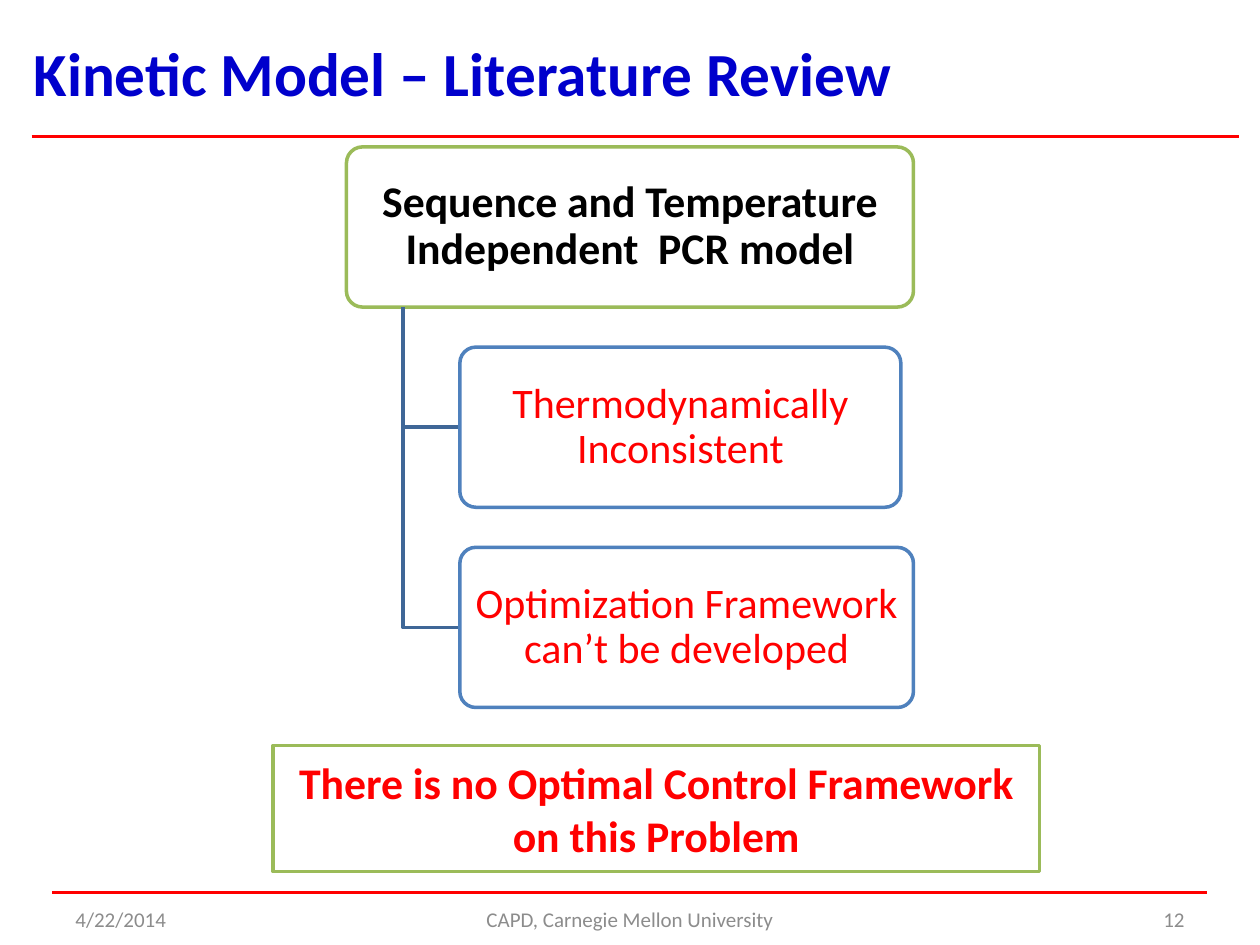
from pptx import Presentation
from pptx.dml.color import RGBColor
from pptx.enum.shapes import MSO_CONNECTOR, MSO_SHAPE
from pptx.enum.text import MSO_ANCHOR, MSO_AUTO_SIZE, PP_ALIGN
from pptx.oxml.ns import qn
from pptx.util import Pt
from lxml import etree

LINE = MSO_CONNECTOR.STRAIGHT
RECT, ROUND = MSO_SHAPE.RECTANGLE, MSO_SHAPE.ROUNDED_RECTANGLE
TOP, MIDDLE = MSO_ANCHOR.TOP, MSO_ANCHOR.MIDDLE
LEFT, CENTER, RIGHT = PP_ALIGN.LEFT, PP_ALIGN.CENTER, PP_ALIGN.RIGHT
NO_FIT = MSO_AUTO_SIZE.NONE

BLACK = RGBColor(0x00, 0x00, 0x00)
WHITE = RGBColor(0xFF, 0xFF, 0xFF)
RED = RGBColor(0xFF, 0x00, 0x00)
NAVY = RGBColor(0x00, 0x00, 0xCC)
BLUE = RGBColor(0x4F, 0x81, 0xBD)
STEEL = RGBColor(0x3F, 0x67, 0x97)
GREEN = RGBColor(0x9B, 0xBB, 0x59)
GRAY = RGBColor(0x8C, 0x8C, 0x8C)


def write(shape, text, size, color, bold=False, align=CENTER, anchor=MIDDLE):
    frame = shape.text_frame
    frame.word_wrap = True
    frame.auto_size = NO_FIT
    frame.vertical_anchor = anchor
    para = frame.paragraphs[0]
    para.alignment = align
    run = para.add_run()
    run.text = text
    font = run.font
    font.name, font.size, font.bold = "Calibri", Pt(size), bold
    font.color.rgb = color
    return frame


def add_box(kind, left, top, width, height, edge):
    box = slide.shapes.add_shape(kind, Pt(left), Pt(top), Pt(width), Pt(height))
    box.shadow.inherit = False
    box.fill.solid()
    box.fill.fore_color.rgb = WHITE
    box.line.color.rgb = edge
    box.line.width = Pt(2)
    return box


prs = Presentation()
prs.slide_width, prs.slide_height = Pt(720), Pt(540)
slide = prs.slides.add_slide(prs.slide_layouts[5])

# Rules above and below the content
for start, end, y in [(18, 708, 78), (30, 690, 510)]:
    rule = slide.shapes.add_connector(LINE, Pt(start), Pt(y), Pt(end), Pt(y))
    rule.line.color.rgb = RED
    rule.line.width = Pt(2.25)
    etree.SubElement(rule._element.spPr, qn("a:effectLst"))

# Footer
for left, width, text, align in [
    (36, 168, "4/22/2014", LEFT),
    (246, 228, "CAPD, Carnegie Mellon University", CENTER),
    (516, 168, "12", RIGHT),
]:
    foot = slide.shapes.add_textbox(Pt(left), Pt(511), Pt(width), Pt(28.75))
    write(foot, text, 12, GRAY, align=align)

title = slide.shapes.title
title.left, title.top = Pt(12), Pt(16.5)
title.width, title.height = Pt(558), Pt(50)
write(title, "Kinetic Model – Literature Review", 35, NAVY, True, LEFT, TOP)

# Tree: a root box with its drawbacks hanging from a trunk
ROOT_X, ROOT_Y, ROOT_W = 198, 84, 324
BOX_H, STEP = 91.5, 114.4
TRUNK_X = ROOT_X + ROOT_W / 10
CHILD_X = ROOT_X + ROOT_W / 5

nodes = [
    (ROOT_X, ROOT_W, GREEN, "Sequence and Temperature Independent  PCR model", 25, BLACK, True),
    (CHILD_X, 252, BLUE, "Thermodynamically Inconsistent", 24, RED, False),
    (CHILD_X, 259.2, BLUE, "Optimization Framework can’t be developed", 24, RED, False),
]
for row, (left, width, edge, text, size, color, bold) in enumerate(nodes):
    top = ROOT_Y + row * STEP
    if row > 0:
        mid = top + BOX_H / 2
        path = slide.shapes.build_freeform(Pt(TRUNK_X), Pt(ROOT_Y + BOX_H))
        path.add_line_segments(
            [(Pt(TRUNK_X), Pt(mid)), (Pt(CHILD_X), Pt(mid))], close=False)
        branch = path.convert_to_shape()
        branch.shadow.inherit = False
        branch.fill.background()
        branch.line.color.rgb = STEEL
        branch.line.width = Pt(2)
    node = add_box(ROUND, left, top, width, BOX_H, edge)
    node.adjustments[0] = 0.1
    frame = write(node, text, size, color, bold)
    frame.margin_left = frame.margin_right = Pt(3.6)
    frame.margin_top = frame.margin_bottom = Pt(2.4)
    frame.paragraphs[0].line_spacing = 0.9

verdict = add_box(RECT, 156, 426, 438, 72, GREEN)
write(verdict, "There is no Optimal Control Framework on this Problem", 25, RED, True)

prs.save("out.pptx")
